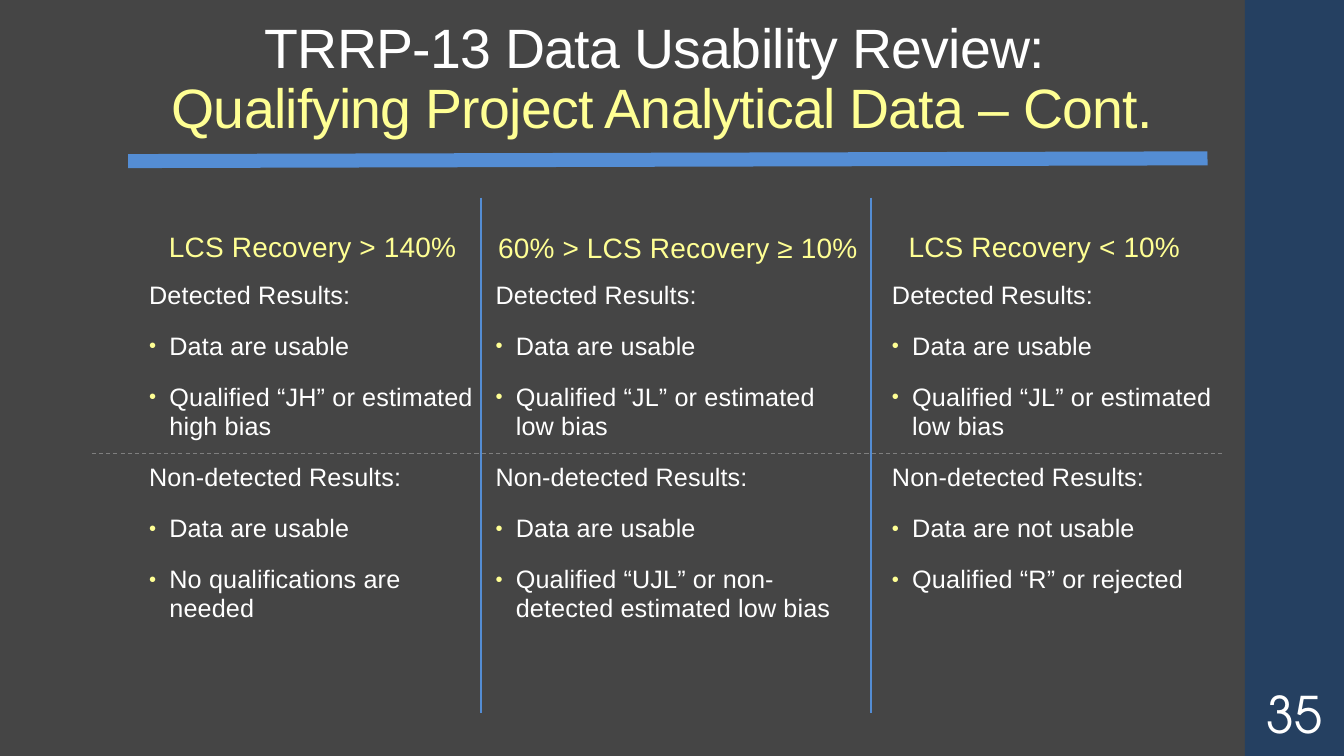
from dataclasses import dataclass

import lxml.etree
import pptx
import pptx.dml.color
import pptx.enum.dml
import pptx.enum.shapes
import pptx.enum.text
import pptx.oxml.ns
import pptx.util

Cm = pptx.util.Cm
Pt = pptx.util.Pt
RGBColor = pptx.dml.color.RGBColor
Align = pptx.enum.text.PP_ALIGN
Anchor = pptx.enum.text.MSO_ANCHOR
qn = pptx.oxml.ns.qn

CHARCOAL = RGBColor(0x45, 0x45, 0x45)
NAVY = RGBColor(0x25, 0x40, 0x61)
BLUE = RGBColor(0x54, 0x8D, 0xD4)
GREY = RGBColor(0x7F, 0x7F, 0x7F)
YELLOW = RGBColor(0xFF, 0xFF, 0x94)
WHITE = RGBColor(0xFF, 0xFF, 0xFF)
BAND_LEFT = 31.37
BAND_WIDTH = 2.5
BULLET_INDENT = Cm(0.51)


@dataclass
class Column:
    heading: str
    head_box: tuple[float, float, float, float]
    body_box: tuple[float, float, float, float]
    detected: tuple[str, str]
    non_detected: tuple[str, str]


@dataclass
class Rule:
    start: tuple[float, float]
    end: tuple[float, float]
    color: RGBColor
    width: float
    dashed: bool = False


COLUMNS = [
    Column("LCS Recovery > 140%", (3.51, 4.75, 8.74, 2.03), (3.51, 6.96, 8.74, 10.19),
           ("Data are usable", "Qualified “JH” or estimated high bias"),
           ("Data are usable", "No qualifications are needed")),
    Column("60% > LCS Recovery ≥ 10%", (12.12, 4.78, 9.93, 2.03), (12.24, 6.96, 9.14, 10.19),
           ("Data are usable", "Qualified “JL” or estimated low bias"),
           ("Data are usable", "Qualified “UJL” or non-detected estimated low bias")),
    Column("LCS Recovery < 10%", (22.23, 4.75, 8.18, 2.03), (22.23, 6.96, 8.97, 10.19),
           ("Data are usable", "Qualified “JL” or estimated low bias"),
           ("Data are not usable", "Qualified “R” or rejected")),
]

TITLE_RULE = Rule((3.23, 4.06), (30.43, 3.99), BLUE, 10)
COLUMN_RULES = [Rule((x, 4.98), (x, 17.96), BLUE, 2) for x in (12.12, 21.95)]
RESULTS_RULE = Rule((2.31, 11.43), (30.84, 11.43), GREY, 0.75, True)


def add_run(p, text: str, size: float, color: RGBColor,
            font: str = "Arial", spacing: int = 0) -> None:
    r = p.add_run()
    r.text = text
    r.font.size = Pt(size)
    r.font.name = font
    r.font.color.rgb = color
    if spacing:
        r.font._element.set("spc", str(spacing))


def add_bullet(p) -> None:
    pPr = p._p.get_or_add_pPr()
    pPr.set("marL", str(BULLET_INDENT))
    pPr.set("indent", str(-BULLET_INDENT))
    clr = lxml.etree.SubElement(pPr, qn("a:buClr"))
    lxml.etree.SubElement(clr, qn("a:srgbClr"), val=str(YELLOW))
    lxml.etree.SubElement(pPr, qn("a:buSzPct"), val="80000")
    lxml.etree.SubElement(pPr, qn("a:buFont"), typeface="Arial")
    lxml.etree.SubElement(pPr, qn("a:buChar"), char="•")


def add_box(slide, box: tuple[float, float, float, float], anchor: Anchor = Anchor.TOP):
    tf = slide.shapes.add_textbox(*map(Cm, box)).text_frame
    tf.word_wrap = True
    tf.vertical_anchor = anchor
    return tf


def add_rule(slide, rule: Rule) -> None:
    line = slide.shapes.add_connector(pptx.enum.shapes.MSO_CONNECTOR.STRAIGHT,
                                      *map(Cm, rule.start + rule.end))
    line.line.color.rgb = rule.color
    line.line.width = Pt(rule.width)
    if rule.dashed:
        line.line.dash_style = pptx.enum.dml.MSO_LINE.DASH
    lxml.etree.SubElement(line._element.spPr, qn("a:effectLst"))


def add_column(slide, column: Column) -> None:
    p = add_box(slide, column.head_box, Anchor.BOTTOM).paragraphs[0]
    p.alignment = Align.CENTER
    p.line_spacing = 0.95
    p.space_after = Pt(2)
    add_run(p, column.heading, 20, YELLOW, spacing=10)

    tf = add_box(slide, column.body_box)
    lines = [("Detected Results:", False), *((t, True) for t in column.detected),
             ("Non-detected Results:", False), *((t, True) for t in column.non_detected)]
    for i, (text, bulleted) in enumerate(lines):
        p = tf.add_paragraph() if i else tf.paragraphs[0]
        if bulleted:
            add_bullet(p)
        p.line_spacing = 0.95
        p.space_before = Pt(14 if i else 0)
        p.space_after = Pt(2)
        add_run(p, text, 18, WHITE, spacing=10)


def add_title(slide) -> None:
    sp = slide.shapes.title
    sp.left, sp.top, sp.width, sp.height = map(Cm, (3.23, 0.38, 26.92, 3.28))
    tf = sp.text_frame
    tf.word_wrap = True
    tf.auto_size = pptx.enum.text.MSO_AUTO_SIZE.NONE
    tf.vertical_anchor = Anchor.BOTTOM
    p = tf.paragraphs[0]
    p.alignment = Align.CENTER
    p.line_spacing = 0.9
    p.space_before = Pt(0)
    add_run(p, "TRRP-13 Data Usability Review: ", 39.6, WHITE, spacing=-50)
    p.add_line_break()
    add_run(p, "Qualifying Project Analytical Data – Cont.", 39.6, YELLOW, spacing=-50)


def add_side_band(slide) -> None:
    sp = slide.shapes.add_shape(pptx.enum.shapes.MSO_SHAPE.RECTANGLE,
                                Cm(BAND_LEFT), 0, Cm(BAND_WIDTH), Cm(19.05))
    sp.shadow.inherit = False
    sp.fill.solid()
    sp.fill.fore_color.rgb = NAVY
    sp.line.fill.background()


def add_page_number(slide) -> None:
    tf = add_box(slide, (BAND_LEFT, 17.15, BAND_WIDTH, 1.65), Anchor.MIDDLE)
    tf.margin_left = tf.margin_right = tf.margin_top = tf.margin_bottom = Cm(0.13)
    p = tf.paragraphs[0]
    p.alignment = Align.CENTER
    add_run(p, "35", 36, WHITE, font="TeX Gyre Adventor")


def main() -> None:
    prs = pptx.Presentation()
    prs.slide_width, prs.slide_height = Cm(33.87), Cm(19.05)
    slide = prs.slides.add_slide(prs.slide_layouts[5])
    slide.background.fill.solid()
    slide.background.fill.fore_color.rgb = CHARCOAL

    add_side_band(slide)
    add_rule(slide, TITLE_RULE)
    add_page_number(slide)
    add_title(slide)
    for column in COLUMNS:
        add_column(slide, column)
    for rule in [*COLUMN_RULES, RESULTS_RULE]:
        add_rule(slide, rule)
    prs.save("out.pptx")


if __name__ == "__main__":
    main()
